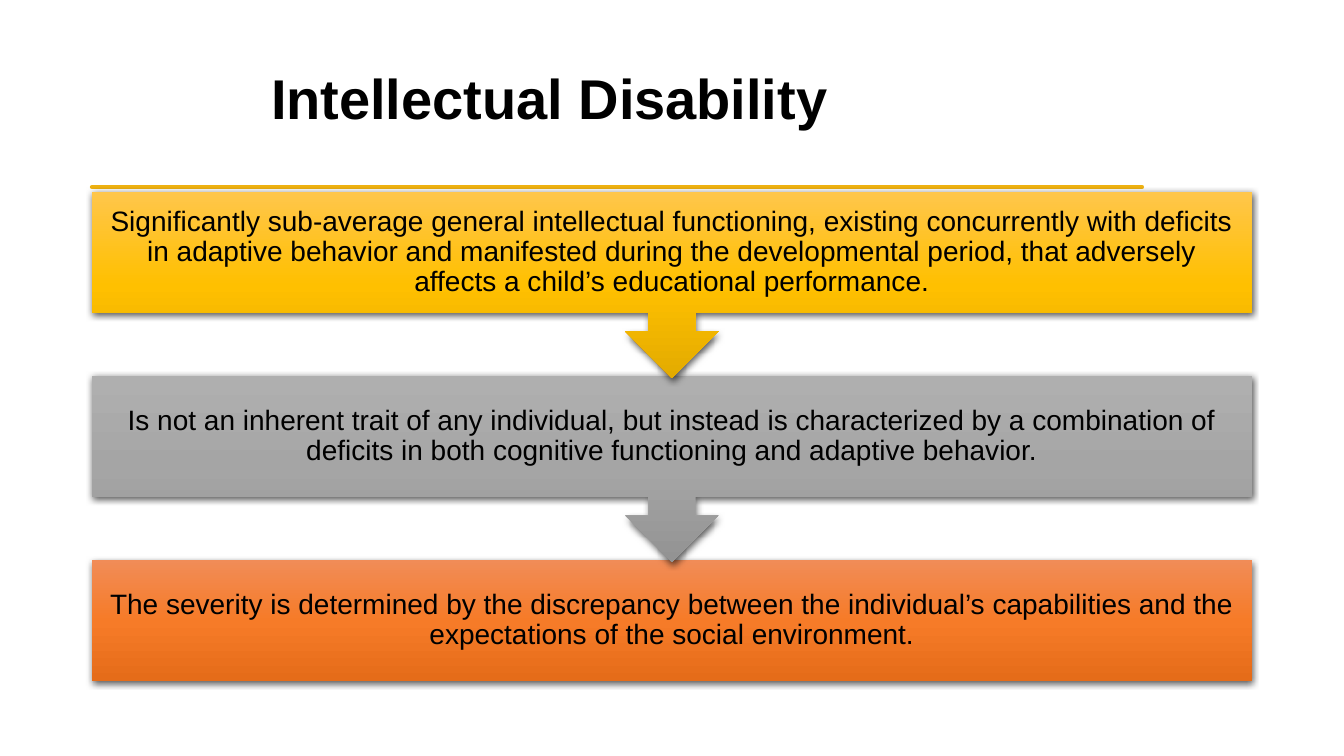
from copy import deepcopy
from dataclasses import dataclass

from pptx import Presentation
from pptx.dml.color import RGBColor as Rgb
from pptx.enum.shapes import MSO_CONNECTOR as Conn, MSO_SHAPE as Shp
from pptx.enum.text import MSO_ANCHOR as Anchor, PP_ALIGN as Align
from pptx.oxml import parse_xml
from pptx.oxml.ns import nsdecls, qn
from pptx.util import Emu, Pt


@dataclass(frozen=True)
class Theme:
    font: str = "Arial"
    ink: str = "000000"
    rule: str = "EEB111"
    gold: tuple = ("FFC64B", "FFC000", "E3AB00")
    gray: tuple = ("AFAFAF", "A5A5A5", "939393")
    rust: tuple = ("F18C57", "F67B28", "E56C19")
    title: int = 40
    body: int = 20


THEME = Theme()
STEPS = [
    ("Significantly sub-average general intellectual functioning, existing "
     "concurrently with deficits in adaptive behavior and manifested during the "
     "developmental period, that adversely affects a child’s educational "
     "performance.", THEME.gold),
    ("Is not an inherent trait of any individual, but instead is characterized "
     "by a combination of deficits in both cognitive functioning and adaptive "
     "behavior.", THEME.gray),
    ("The severity is determined by the discrepancy between the individual’s "
     "capabilities and the expectations of the social environment.", THEME.rust),
]


def px(n):
    return Emu(round(n * 914400 / 100.8))


def write(shape, text, size, bold=False, align=Align.LEFT, pad=(10, 5)):
    frame = shape.text_frame
    frame.word_wrap = True
    frame.vertical_anchor = Anchor.MIDDLE
    frame.margin_left = frame.margin_right = px(pad[0])
    frame.margin_top = frame.margin_bottom = px(pad[1])
    para = frame.paragraphs[0]
    para.text = text
    para.alignment = align
    para.line_spacing = 0.9
    font = para.runs[0].font
    font.name, font.size, font.bold = THEME.font, Pt(size), bold
    font.color.rgb = Rgb.from_string(THEME.ink)


def shade(shape, tones):
    """Fill from top to bottom with evenly spaced tones."""
    fill = shape.fill
    fill.gradient()
    fill.gradient_angle = 270
    stops = shape._element.spPr.find(".//" + qn("a:gsLst"))
    stops.append(deepcopy(stops[0]))
    for i, (stop, tone) in enumerate(zip(fill.gradient_stops, tones)):
        stop.position = i / (len(tones) - 1)
        stop.color.rgb = Rgb.from_string(tone)


def drop(shape):
    """Cast a soft shadow straight down."""
    shape._element.spPr.append(parse_xml(
        f'<a:effectLst {nsdecls("a")}><a:outerShdw blurRad="{Pt(4.5)}" '
        f'dist="{Pt(1.5)}" dir="5400000" algn="ctr" rotWithShape="0">'
        '<a:srgbClr val="000000"><a:alpha val="63000"/></a:srgbClr>'
        '</a:outerShdw></a:effectLst>'))


def head(slide, x, y, w, h):
    """Place the title and the rule that closes the box."""
    box = slide.shapes.add_textbox(px(x + 169), px(y), px(870), px(146))
    write(box, "Intellectual Disability", THEME.title, bold=True)
    line = slide.shapes.add_connector(
        Conn.STRAIGHT, px(x), px(y + h), px(x + w), px(y + h))
    line.line.color.rgb = Rgb.from_string(THEME.rule)
    line.line.width = Pt(3)
    line.line._get_or_add_ln().set("cap", "rnd")
    line._element.spPr.append(parse_xml(f'<a:effectLst {nsdecls("a")}/>'))


def flow(slide, x, y, w, h):
    """Stack the steps, lowest first so each arrow tip lies on the next."""
    bar, tall = 121, 186
    last = len(STEPS) - 1
    pitch = (h - bar) / last
    for i, (text, tones) in reversed(list(enumerate(STEPS))):
        kind, high = ((Shp.RECTANGLE, bar) if i == last
                      else (Shp.DOWN_ARROW_CALLOUT, tall))
        step = slide.shapes.add_shape(
            kind, px(x), px(y + i * pitch), px(w), px(high))
        shade(step, tones)
        step.line.fill.background()
        drop(step)
        write(step, text, THEME.body, align=Align.CENTER, pad=(16, 16))


def main():
    deck = Presentation()
    deck.slide_width, deck.slide_height = px(1344), px(756)
    slide = deck.slides.add_slide(deck.slide_layouts[6])
    head(slide, 92, 28, 1050, 159)
    flow(slide, 92, 192, 1160, 489)
    deck.save("out.pptx")


if __name__ == "__main__":
    main()
